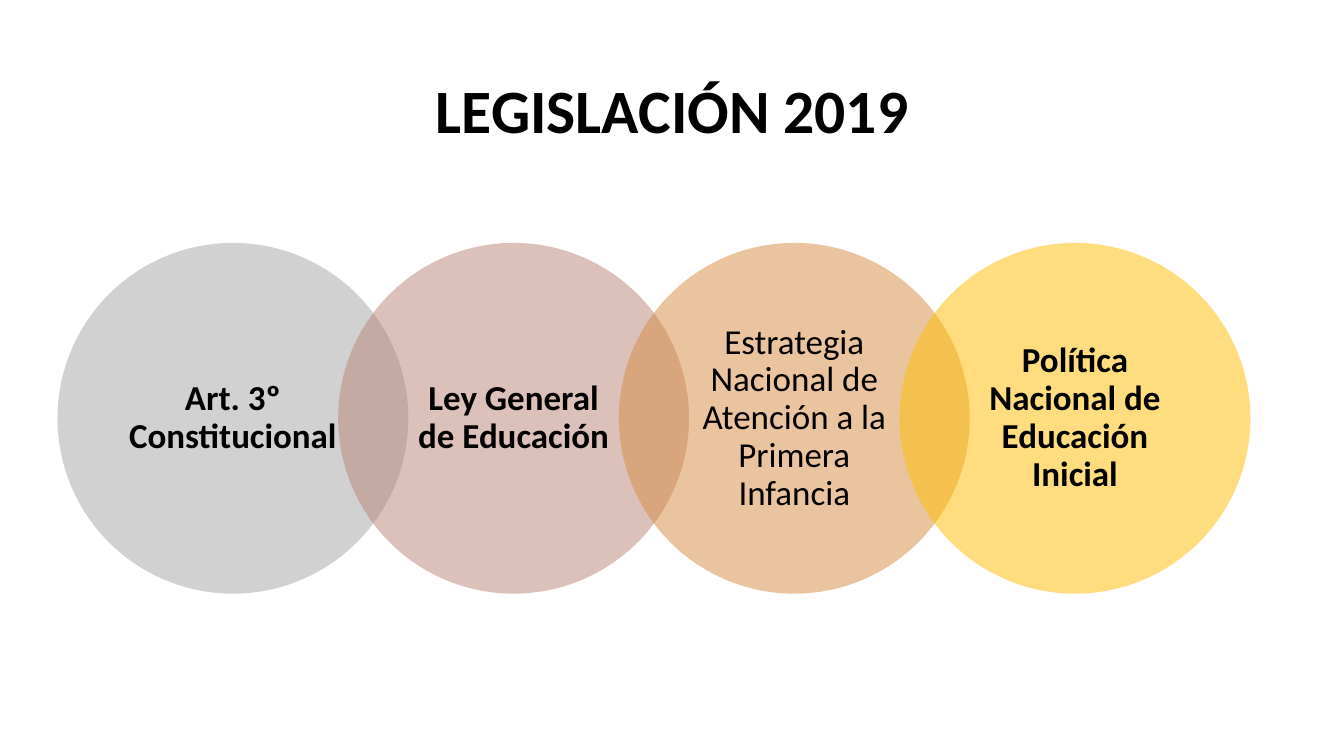
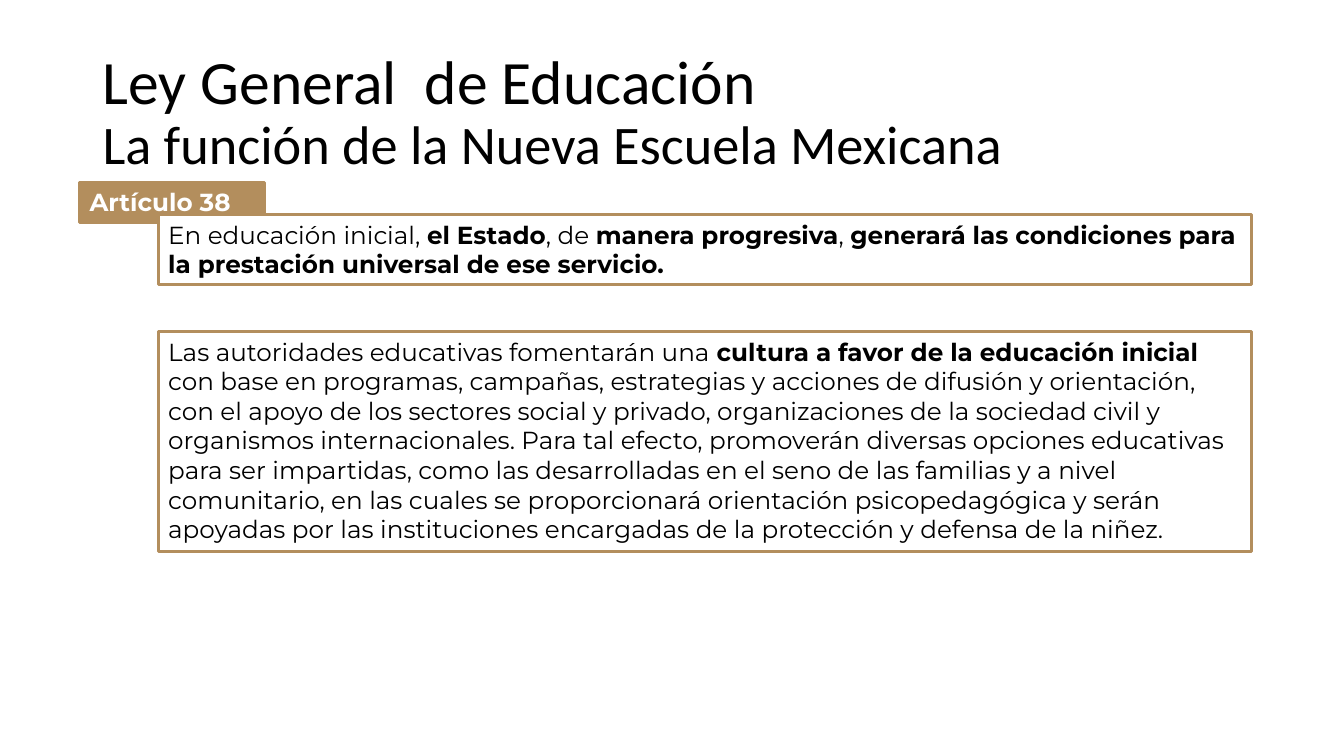
from lxml import etree
from pptx import Presentation
from pptx.dml.color import RGBColor
from pptx.enum.shapes import MSO_SHAPE
from pptx.enum.text import MSO_ANCHOR, PP_ALIGN
from pptx.oxml.ns import qn
from pptx.util import Inches, Pt

OVAL, RECT = MSO_SHAPE.OVAL, MSO_SHAPE.RECTANGLE
TOP, MIDDLE = MSO_ANCHOR.TOP, MSO_ANCHOR.MIDDLE
LEFT, CENTER = PP_ALIGN.LEFT, PP_ALIGN.CENTER

COLORS = {"text": "000000", "white": "FFFFFF", "gold": "B38E5D",
          "gray": "A5A5A5", "rose": "BB8377", "orange": "D58B3F",
          "yellow": "FFBD00"}
TITLE_FONT, BODY_FONT = "Calibri", "Montserrat"
TITLE_BOX = (0.92, 0.4, 11.5, 1.45)

# A run is (text, format); a line is a list of runs.
BOLD = {"bold": True}

LAWS_TITLE = [[("LEGISLACIÓN 2019", BOLD)]]
LAWS = [
    ("Art. 3º Constitucional", "gray", True),
    ("Ley General de Educación", "rose", True),
    ("Estrategia Nacional de Atención a la Primera Infancia", "orange", False),
    ("Política Nacional de Educación Inicial", "yellow", True),
]
CIRCLES_LEFT, CIRCLES_TOP, DIAMETER = 0.57, 2.41, 3.48
PITCH = 0.8 * DIAMETER

ARTICLE_TITLE = [
    [("Ley General  de Educación", {})],
    [("La función de la Nueva Escuela Mexicana", {"size": 38.8})],
]
ARTICLE_BOXES = [
    ((0.79, 1.81, 1.83, 0.4), "gold", "white", [("Artículo 38", BOLD)]),
    ((1.57, 2.13, 10.84, 0.69), "white", "text", [
        ("En educación inicial, ", {}),
        ("el Estado", BOLD),
        (", de ", {}),
        ("manera progresiva", BOLD),
        (", ", {}),
        ("generará las condiciones para la prestación universal de ese "
         "servicio.", BOLD),
    ]),
    ((1.57, 3.29, 10.84, 2.18), "white", "text", [
        ("Las autoridades educativas fomentarán una ", {}),
        ("cultura a favor de la educación inicial ", BOLD),
        ("con base en programas, campañas, estrategias y acciones de "
         "difusión y orientación, con el apoyo de los sectores social y "
         "privado, organizaciones de la sociedad civil y organismos "
         "internacionales. Para tal efecto, promoverán diversas opciones "
         "educativas para ser impartidas, como las desarrolladas en el seno "
         "de las familias y a nivel comunitario, en las cuales se "
         "proporcionará orientación psicopedagógica y serán apoyadas por "
         "las instituciones encargadas de la protección y defensa de la "
         "niñez.", {}),
    ]),
]


def rgb(name):
    return RGBColor.from_string(COLORS[name])


def write(sp, lines, font=TITLE_FONT, size=44, color="text", align=LEFT,
          anchor=MIDDLE, spacing=0.9, insets=(0.1, 0.05)):
    """Fill a shape with one paragraph, its lines parted by line breaks."""
    tf = sp.text_frame
    tf.word_wrap = True
    tf.vertical_anchor = anchor
    tf.margin_left = tf.margin_right = Inches(insets[0])
    tf.margin_top = tf.margin_bottom = Inches(insets[1])
    p = tf.paragraphs[0]
    p.alignment, p.line_spacing = align, spacing
    for i, line in enumerate(lines):
        if i:
            p.add_line_break()
        for text, fmt in line:
            r = p.add_run()
            r.text = text
            r.font.name = font
            r.font.size = Pt(fmt.get("size", size))
            r.font.bold = fmt.get("bold", False)
            r.font.color.rgb = rgb(color)


def add_shape(s, kind, box, fill, line=None, alpha=None):
    sp = s.shapes.add_shape(kind, *map(Inches, box))
    sp.shadow.inherit = False
    sp.fill.solid()
    sp.fill.fore_color.rgb = rgb(fill)
    if alpha is not None:
        color = sp.fill._xPr.find(qn("a:solidFill"))[0]
        etree.SubElement(color, qn("a:alpha"), val=str(alpha * 1000))
    if line:
        sp.line.color.rgb = rgb(line)
        sp.line.width = Pt(2.25)
    else:
        sp.line.fill.background()
    return sp


def add_slide(prs, title, align=LEFT):
    s = prs.slides.add_slide(prs.slide_layouts[6])
    write(s.shapes.add_textbox(*map(Inches, TITLE_BOX)), title, align=align)
    return s


def build_laws(prs):
    s = add_slide(prs, LAWS_TITLE, align=CENTER)
    for i, (name, fill, bold) in enumerate(LAWS):
        box = (CIRCLES_LEFT + i * PITCH, CIRCLES_TOP, DIAMETER, DIAMETER)
        sp = add_shape(s, OVAL, box, fill, alpha=50)
        write(sp, [[(name, {"bold": bold})]], size=25, align=CENTER,
              insets=(0.19, 0.03))


def build_article(prs):
    s = add_slide(prs, ARTICLE_TITLE)
    for box, fill, color, runs in ARTICLE_BOXES:
        sp = add_shape(s, RECT, box, fill, line="gold")
        write(sp, [runs], font=BODY_FONT, size=17.6, color=color, anchor=TOP,
              spacing=1.0)


def main():
    prs = Presentation()
    prs.slide_width, prs.slide_height = Inches(13.33), Inches(7.5)
    build_laws(prs)
    build_article(prs)
    prs.save("out.pptx")


if __name__ == "__main__":
    main()
